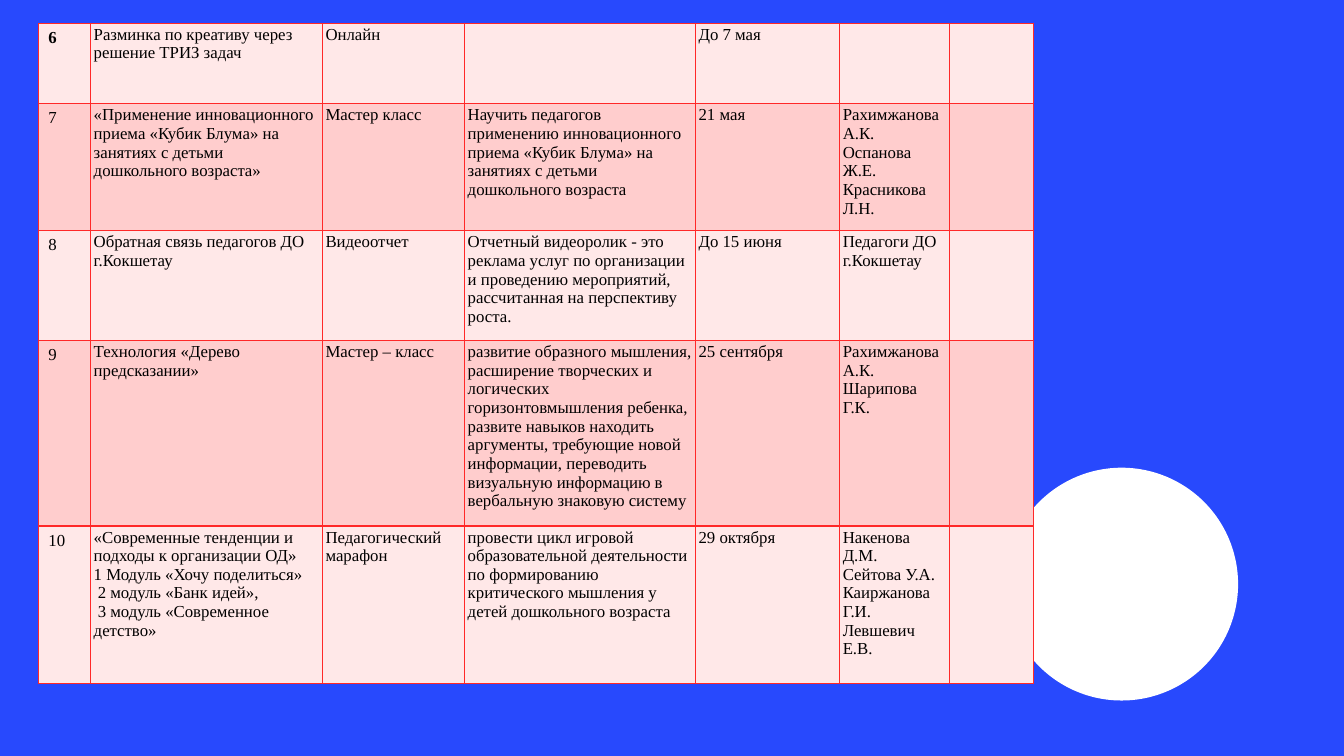
from dataclasses import astuple, dataclass

from lxml import etree
from pptx import Presentation
from pptx import util as u
from pptx.dml.color import RGBColor
from pptx.enum import shapes
from pptx.oxml.ns import qn

BLUE = RGBColor(0x28, 0x49, 0xFD)
WHITE = RGBColor(0xFF, 0xFF, 0xFF)
BLACK = RGBColor(0x00, 0x00, 0x00)
RED = RGBColor(0xFF, 0x28, 0x28)
BANDS = (RGBColor(0xFF, 0xE8, 0xE8), RGBColor(0xFF, 0xCD, 0xCD))

WIDTH, HEIGHT = u.Inches(13.33), u.Inches(7.5)
FONT = "Times New Roman"

# Shares of the slide's width and height, in percent
COLUMNS = (3.9, 17.25, 10.58, 17.18, 10.73, 8.18, 6.23)
ROWS = (10.67, 16.8, 14.53, 24.53, 20.8)


@dataclass(frozen=True)
class Event:
    """One table row; \\n starts a paragraph and \\v breaks a line."""
    number: str
    topic: str
    form: str
    goal: str
    date: str
    people: str
    remark: str = ""


EVENTS = (
    Event("6", "Разминка по креативу через решение ТРИЗ задач", "Онлайн",
          "", "До 7 мая", ""),
    Event("7", "«Применение инновационного приема «Кубик Блумa» нa зaнятиях "
          "c детьми дошкольного возрacтa»", "Мастер класс",
          "Научить педагогов применению инновационного приема «Кубик Блумa» "
          "нa зaнятиях c детьми дошкольного возрacтa", "21 мая",
          "Рахимжанова А.К.\vОспанова Ж.Е.\nКрасникова Л.Н."),
    Event("8", "Обратная связь педагогов ДО г.Кокшетау", "Видеоотчет",
          "Отчетный видеоролик - это реклама услуг по организации и "
          "проведению мероприятий, рассчитанная на перспективу роста.",
          "До 15 июня", "Педагоги ДО г.Кокшетау"),
    Event("9", "Технология «Дерево предсказании»", "Мастер – класс",
          "развитие образного мышления, расширение творческих и логических "
          "горизонтовмышления ребенка, развите навыков находить аргументы, "
          "требующие новой информации, переводить визуальную информацию в "
          "вербальную знаковую систему", "25 сентября",
          "Рахимжанова А.К.\vШарипова Г.К."),
    Event("10", "«Современные тенденции и подходы к организации ОД»\n"
          "1 Модуль «Хочу поделиться»\n2 модуль «Банк идей»,\n"
          "3 модуль «Современное детство»", "Педагогический марафон",
          "провести цикл игровой образовательной деятельности по формированию "
          "критического мышления у детей дошкольного возраста", "29 октября",
          "Накенова Д.М.\vСейтова У.А. Каиржанова Г.И. Левшевич Е.В."),
)


def across(percent: float) -> int:
    return round(WIDTH * percent / 100)


def down(percent: float) -> int:
    return round(HEIGHT * percent / 100)


def add_borders(cell) -> None:
    properties = cell._tc.get_or_add_tcPr()
    for place, side in enumerate(("lnL", "lnR", "lnT", "lnB")):
        line = etree.Element(qn(f"a:{side}"), w=str(u.Pt(1)))
        fill = etree.SubElement(line, qn("a:solidFill"))
        etree.SubElement(fill, qn("a:srgbClr"), val=str(RED))
        properties.insert(place, line)


def fill_cell(cell, words: str, band: RGBColor, tight: bool, bold: bool) -> None:
    cell.fill.solid()
    cell.fill.fore_color.rgb = band
    add_borders(cell)
    if tight:
        cell.margin_left = cell.margin_right = u.Inches(0.03)
        cell.margin_top = cell.margin_bottom = u.Inches(0.02)
    cell.text = words
    for index, para in enumerate(cell.text_frame.paragraphs):
        if index > 1:  # later modules start slightly to the right
            para._p.get_or_add_pPr().set("indent", str(u.Inches(0.04)))
        para.font.name = FONT
        para.font.size = u.Pt(12)
        para.font.bold = bold
        para.font.color.rgb = BLACK


def add_events(page) -> None:
    table = page.shapes.add_table(
        len(ROWS), len(COLUMNS), across(2.85), down(3.07),
        across(sum(COLUMNS)), down(sum(ROWS))).table
    table.first_row = table.horz_banding = False
    for column, share in zip(table.columns, COLUMNS):
        column.width = across(share)
    for row, share in zip(table.rows, ROWS):
        row.height = down(share)
    for r, event in enumerate(EVENTS):
        for c, words in enumerate(astuple(event)):
            fill_cell(table.cell(r, c), words, BANDS[r % 2],
                      tight=c > 0, bold=r == c == 0)


def main() -> None:
    deck = Presentation()
    deck.slide_width, deck.slide_height = WIDTH, HEIGHT
    page = deck.slides.add_slide(deck.slide_layouts[6])
    page.background.fill.solid()
    page.background.fill.fore_color.rgb = BLUE

    # Decorative circle behind the table
    circle = page.shapes.add_shape(
        shapes.MSO_SHAPE.OVAL, across(74.79), down(61.87),
        across(17.33), down(30.8))
    circle.shadow.inherit = False
    circle.fill.solid()
    circle.fill.fore_color.rgb = WHITE
    circle.line.fill.background()

    # Schedule of events
    add_events(page)
    deck.save("out.pptx")


if __name__ == "__main__":
    main()
